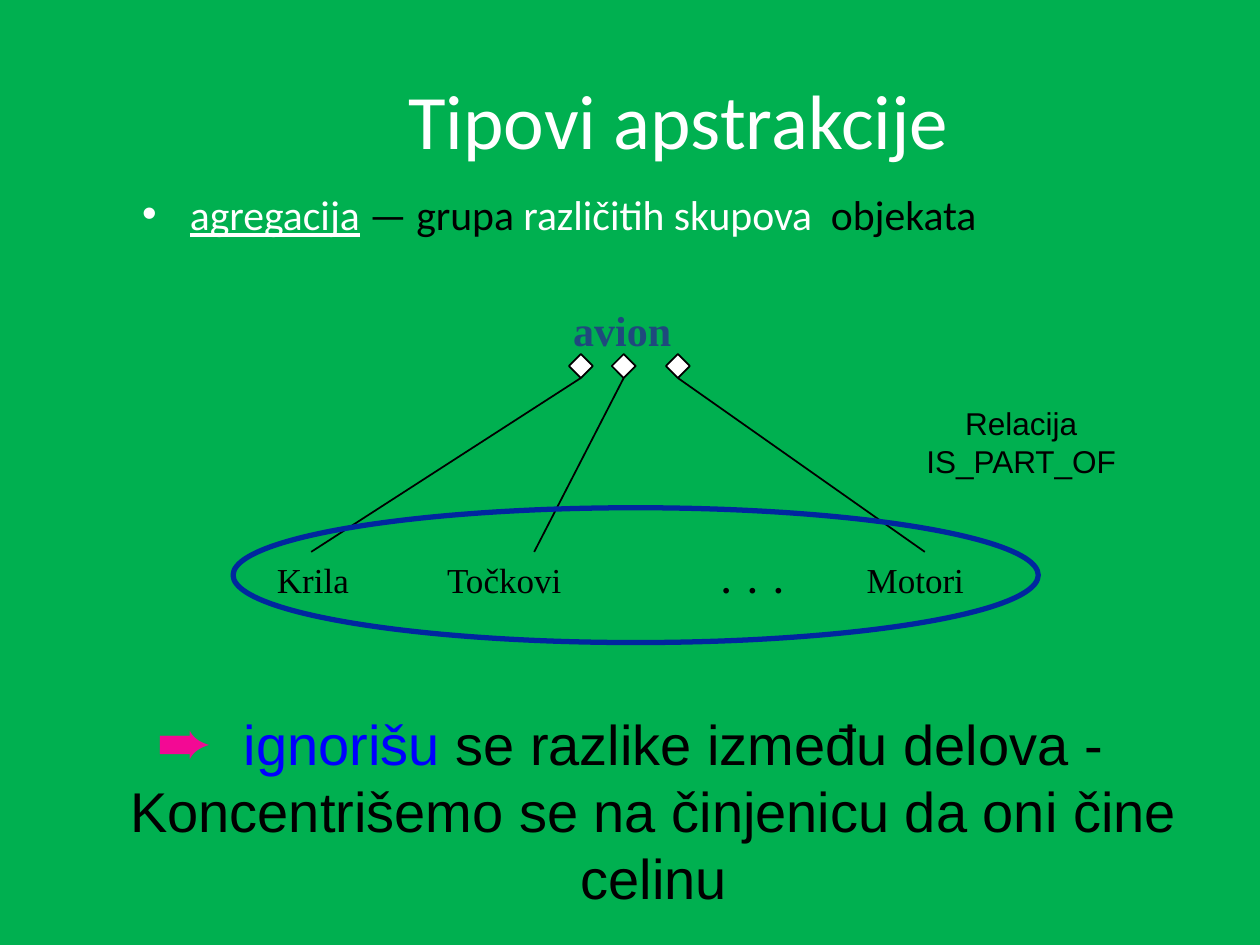
import pptx
import pptx.util
import pptx.dml.color
import pptx.enum.shapes
import pptx.enum.text
import pptx.oxml.ns
import lxml.etree

Inches = pptx.util.Inches
Pt = pptx.util.Pt
SHAPES = pptx.enum.shapes.MSO_SHAPE
ALIGN = pptx.enum.text.PP_ALIGN
ANCHOR = pptx.enum.text.MSO_ANCHOR

COLORS = {
    "background": "00B050", "white": "FFFFFF", "black": "000000",
    "whole": "1F497D", "ellipse": "00279F", "arrow": "F30994", "emphasis": "0000FF",
}

TITLE = "Tipovi apstrakcije"
DEFINITION = [
    ("agregacija", {"color": "white", "underline": True}),
    (" — grupa ", {}),
    ("različitih skupova ", {"color": "white"}),
    (" objekata", {}),
]
CONCLUSION = [
    ("  ", {}),
    ("ignorišu ", {"color": "emphasis"}),
    ("se razlike između delova - Koncentrišemo se na činjenicu da oni čine celinu", {}),
]
WHOLE = ("avion", (4.45, 2.37, 0.98, 0.5))
RELATION = ["Relacija", "IS_PART_OF"]
# Text, left, width, bold
PARTS = [
    ("Krila", 2.1, 0.77, False),
    ("Točkovi", 3.45, 1.13, False),
    (".  .  .", 5.63, 0.69, True),
    ("Motori", 6.78, 0.97, False),
]
# Horizontal centre of the diamond, horizontal end of its line
LINKS = [(4.61, 2.47), (4.95, 4.24), (5.38, 7.34)]
DIAMOND_SIZE = 0.19
LINK_TOP, LINK_BOTTOM = 3.0, 4.38


def rgb(name):
    return pptx.dml.color.RGBColor.from_string(COLORS[name])


def write_text(shape, paragraphs, size, font="Arial", color="black", bold=False,
               align=ALIGN.LEFT, anchor=ANCHOR.TOP, wrap=True, line_spacing=None):
    """Fill a shape with paragraphs, each a string or a list of (text, format) runs."""
    frame = shape.text_frame
    frame.word_wrap = wrap
    frame.vertical_anchor = anchor
    frame.auto_size = pptx.enum.text.MSO_AUTO_SIZE.NONE
    for index, content in enumerate(paragraphs):
        paragraph = frame.add_paragraph() if index else frame.paragraphs[0]
        paragraph.alignment = align
        if line_spacing:
            paragraph.line_spacing = line_spacing
        runs = [(content, {})] if isinstance(content, str) else content
        for text, style in runs:
            run = paragraph.add_run()
            run.text = text
            run.font.size = Pt(size)
            run.font.name = font
            run.font.bold = bold
            run.font.underline = style.get("underline", False)
            run.font.color.rgb = rgb(style.get("color", color))


def add_text(slide, box, paragraphs, size, **style):
    shape = slide.shapes.add_textbox(*map(Inches, box))
    write_text(shape, paragraphs, size, **style)
    return shape


def add_bullet(shape, character, color=None, percent=100):
    properties = shape.text_frame.paragraphs[0]._p.get_or_add_pPr()
    properties.set("marL", str(Inches(0.38)))
    properties.set("indent", str(-Inches(0.38)))

    def add(parent, tag, **attributes):
        return lxml.etree.SubElement(parent, pptx.oxml.ns.qn(tag), attributes)

    if color:
        add(add(properties, "a:buClr"), "a:srgbClr", val=COLORS[color])
    add(properties, "a:buSzPct", val=str(percent * 1000))
    add(properties, "a:buFont", typeface="Arial")
    add(properties, "a:buChar", char=character)


def add_outlined(slide, kind, box, line, width, fill=None):
    shape = slide.shapes.add_shape(kind, *map(Inches, box))
    shape.shadow.inherit = False
    if fill:
        shape.fill.solid()
        shape.fill.fore_color.rgb = rgb(fill)
    else:
        shape.fill.background()
    shape.line.color.rgb = rgb(line)
    shape.line.width = Pt(width)


def add_line(slide, start, end):
    line = slide.shapes.add_connector(
        pptx.enum.shapes.MSO_CONNECTOR.STRAIGHT, *map(Inches, start + end))
    line.line.color.rgb = rgb("black")
    line.line.width = Pt(1)
    lxml.etree.SubElement(line._element.spPr, pptx.oxml.ns.qn("a:effectLst"))


def main():
    presentation = pptx.Presentation()
    presentation.slide_width, presentation.slide_height = Inches(10), Inches(7.5)
    slide = presentation.slides.add_slide(presentation.slide_layouts[5])
    slide.background.fill.solid()
    slide.background.fill.fore_color.rgb = rgb("background")

    title = slide.shapes.title
    title.left, title.top, title.width, title.height = map(Inches, (1.51, 0.24, 7.75, 1.4))
    write_text(title, [TITLE], 44, font="Calibri", color="white",
               align=ALIGN.CENTER, anchor=ANCHOR.MIDDLE)

    definition = add_text(slide, (1.03, 1.56, 8.5, 0.39), [DEFINITION], 23.8,
                          font="Calibri", line_spacing=0.7)
    add_bullet(definition, "•", color="white")

    whole, whole_box = WHOLE
    add_text(slide, whole_box, [whole], 24, font="Times New Roman",
             color="whole", bold=True, wrap=False)
    for text, left, width, bold in PARTS:
        add_text(slide, (left, 4.38, width, 0.43), [text], 20,
                 font="Times New Roman", bold=bold, wrap=False)
    add_text(slide, (7.24, 3.16, 1.73, 0.7), RELATION, 18, align=ALIGN.CENTER, wrap=False)

    conclusion = add_text(slide, (0.25, 5.58, 9.5, 0.72), [CONCLUSION], 32, align=ALIGN.CENTER)
    add_bullet(conclusion, "➨", color="arrow", percent=120)

    for center, end in LINKS:
        add_line(slide, (center, LINK_TOP), (end, LINK_BOTTOM))
        diamond = (center - DIAMOND_SIZE / 2, LINK_TOP - DIAMOND_SIZE, DIAMOND_SIZE, DIAMOND_SIZE)
        add_outlined(slide, SHAPES.DIAMOND, diamond, "black", 1, fill="white")
    add_outlined(slide, SHAPES.OVAL, (1.85, 4.03, 6.39, 1.07), "ellipse", 3)

    presentation.save("out.pptx")


if __name__ == "__main__":
    main()
